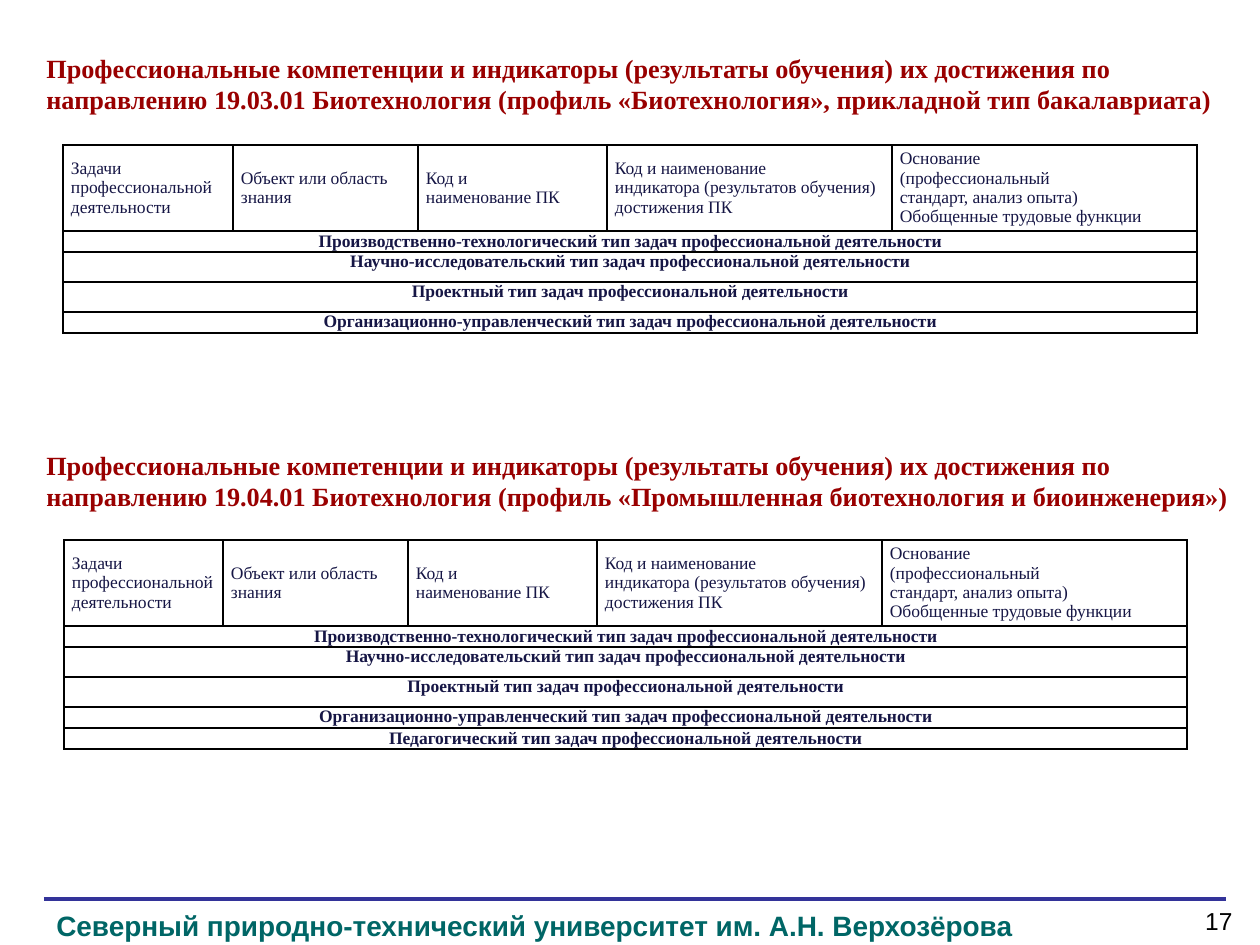
from dataclasses import dataclass

from lxml.etree import SubElement
from pptx import Presentation
from pptx.dml.color import RGBColor
from pptx.enum.shapes import MSO_CONNECTOR
from pptx.enum.text import MSO_ANCHOR, MSO_AUTO_SIZE, PP_ALIGN
from pptx.oxml.ns import qn
from pptx.util import Emu, Pt


@dataclass(frozen=True)
class Theme:
    serif: str = "Times New Roman"
    sans: str = "Arial"
    heading: str = "990000"
    cell: str = "161645"
    border: str = "000000"
    rule: str = "333399"
    university: str = "006666"
    number: str = "000000"
    heading_pt: int = 15
    cell_pt: int = 10
    university_pt: int = 16
    number_pt: int = 14
    border_pt: int = 1
    rule_pt: float = 2.25


@dataclass(frozen=True)
class Style:
    font: str
    size: int
    color: str
    bold: bool = False
    align: PP_ALIGN = PP_ALIGN.LEFT


@dataclass(frozen=True)
class Box:
    left: int
    top: int
    width: int
    height: int


@dataclass(frozen=True)
class TaskRow:
    kind: str
    height: int
    anchor: MSO_ANCHOR = MSO_ANCHOR.TOP


@dataclass(frozen=True)
class Programme:
    heading: str
    heading_box: Box
    table_left: int
    table_top: int
    first_column: int
    tasks: tuple[TaskRow, ...]


THEME = Theme()
HEADING = Style(THEME.serif, THEME.heading_pt, THEME.heading, bold=True)
COLUMN_TITLE = Style(THEME.serif, THEME.cell_pt, THEME.cell)
TASK = Style(THEME.serif, THEME.cell_pt, THEME.cell, True, PP_ALIGN.CENTER)
UNIVERSITY = Style(THEME.sans, THEME.university_pt, THEME.university, bold=True)
NUMBER = Style(THEME.sans, THEME.number_pt, THEME.number, align=PP_ALIGN.RIGHT)

HEADER_HEIGHT = 86
CELL_INSET = 8
OTHER_COLUMNS = (185, 189, 285, 305)
COLUMN_TITLES = (
    "Задачи\nпрофессиональной деятельности",
    "Объект или область\nзнания",
    "Код и\nнаименование ПК",
    "Код и наименование\nиндикатора (результатов обучения) достижения ПК",
    "Основание\n(профессиональный\nстандарт, анализ опыта)\nОбобщенные трудовые функции",
)
HEADING_START = (
    "Профессиональные компетенции и индикаторы (результаты обучения) "
    "их достижения по направлению "
)
COMMON_TASKS = (
    TaskRow("Производственно-технологический", 21, MSO_ANCHOR.MIDDLE),
    TaskRow("Научно-исследовательский", 30),
    TaskRow("Проектный", 30),
    TaskRow("Организационно-управленческий", 21),
)
PROGRAMMES = (
    Programme(
        "19.03.01 Биотехнология (профиль «Биотехнология», прикладной тип бакалавриата)",
        Box(34, 46, 1201, 77), 63, 145, 170, COMMON_TASKS,
    ),
    Programme(
        "19.04.01 Биотехнология (профиль «Промышленная биотехнология и биоинженерия»)",
        Box(34, 443, 1211, 77), 64, 540, 159,
        COMMON_TASKS + (TaskRow("Педагогический", 21, MSO_ANCHOR.MIDDLE),),
    ),
)


def px(length: int) -> Emu:
    return Emu(round(length * 914400 / 126))


def write(frame, text: str, style: Style) -> None:
    frame.text = text
    for paragraph in frame.paragraphs:
        paragraph.alignment = style.align
        for run in paragraph.runs:
            run.font.name = style.font
            run.font.size = Pt(style.size)
            run.font.bold = style.bold
            run.font.color.rgb = RGBColor.from_string(style.color)


def add_text(slide, box: Box, text: str, style: Style,
             wrap: bool = True, grow: bool = True) -> None:
    frame = slide.shapes.add_textbox(
        px(box.left), px(box.top), px(box.width), px(box.height)).text_frame
    frame.word_wrap = wrap
    frame.auto_size = MSO_AUTO_SIZE.SHAPE_TO_FIT_TEXT if grow else MSO_AUTO_SIZE.NONE
    write(frame, text, style)


def format_cell(cell) -> None:
    """Set the insets, the four borders and the empty fill."""
    cell.margin_left = cell.margin_right = px(CELL_INSET)
    cell.margin_top = cell.margin_bottom = 0
    properties = cell._tc.get_or_add_tcPr()
    for side in ("a:lnL", "a:lnR", "a:lnT", "a:lnB"):
        border = SubElement(properties, qn(side), w=str(Pt(THEME.border_pt)))
        fill = SubElement(border, qn("a:solidFill"))
        SubElement(fill, qn("a:srgbClr"), val=THEME.border)
    cell.fill.background()


def add_programme(slide, programme: Programme) -> None:
    add_text(slide, programme.heading_box, HEADING_START + programme.heading, HEADING)

    widths = (programme.first_column, *OTHER_COLUMNS)
    heights = (HEADER_HEIGHT, *(task.height for task in programme.tasks))
    table = slide.shapes.add_table(
        len(heights), len(widths), px(programme.table_left), px(programme.table_top),
        px(sum(widths)), px(sum(heights))).table
    table.first_row = table.horz_banding = False
    for column, width in zip(table.columns, widths):
        column.width = px(width)
    for row, height in zip(table.rows, heights):
        row.height = px(height)
        for cell in row.cells:
            format_cell(cell)

    for cell, title in zip(table.rows[0].cells, COLUMN_TITLES):
        cell.vertical_anchor = MSO_ANCHOR.MIDDLE
        write(cell.text_frame, title, COLUMN_TITLE)
    for index, task in enumerate(programme.tasks, start=1):
        cell = table.cell(index, 0)
        cell.merge(table.cell(index, len(widths) - 1))
        cell.vertical_anchor = task.anchor
        write(cell.text_frame,
              f"{task.kind} тип задач профессиональной деятельности", TASK)


def add_footer(slide) -> None:
    rule = slide.shapes.add_connector(
        MSO_CONNECTOR.STRAIGHT, px(44), px(899), px(1226), px(899))
    rule.line.color.rgb = RGBColor.from_string(THEME.rule)
    rule.line.width = Pt(THEME.rule_pt)
    SubElement(rule._element.spPr, qn("a:effectLst"))
    add_text(slide, Box(44, 902, 1032, 47),
             "Северный природно-технический университет им. А.Н. Верхозёрова",
             UNIVERSITY, wrap=False)
    add_text(slide, Box(1186, 900, 59, 45), "17", NUMBER, grow=False)


def main() -> None:
    presentation = Presentation()
    presentation.slide_width, presentation.slide_height = px(1260), px(945)
    slide = presentation.slides.add_slide(presentation.slide_layouts[6])
    for programme in PROGRAMMES:
        add_programme(slide, programme)
    add_footer(slide)
    presentation.save("out.pptx")


if __name__ == "__main__":
    main()
